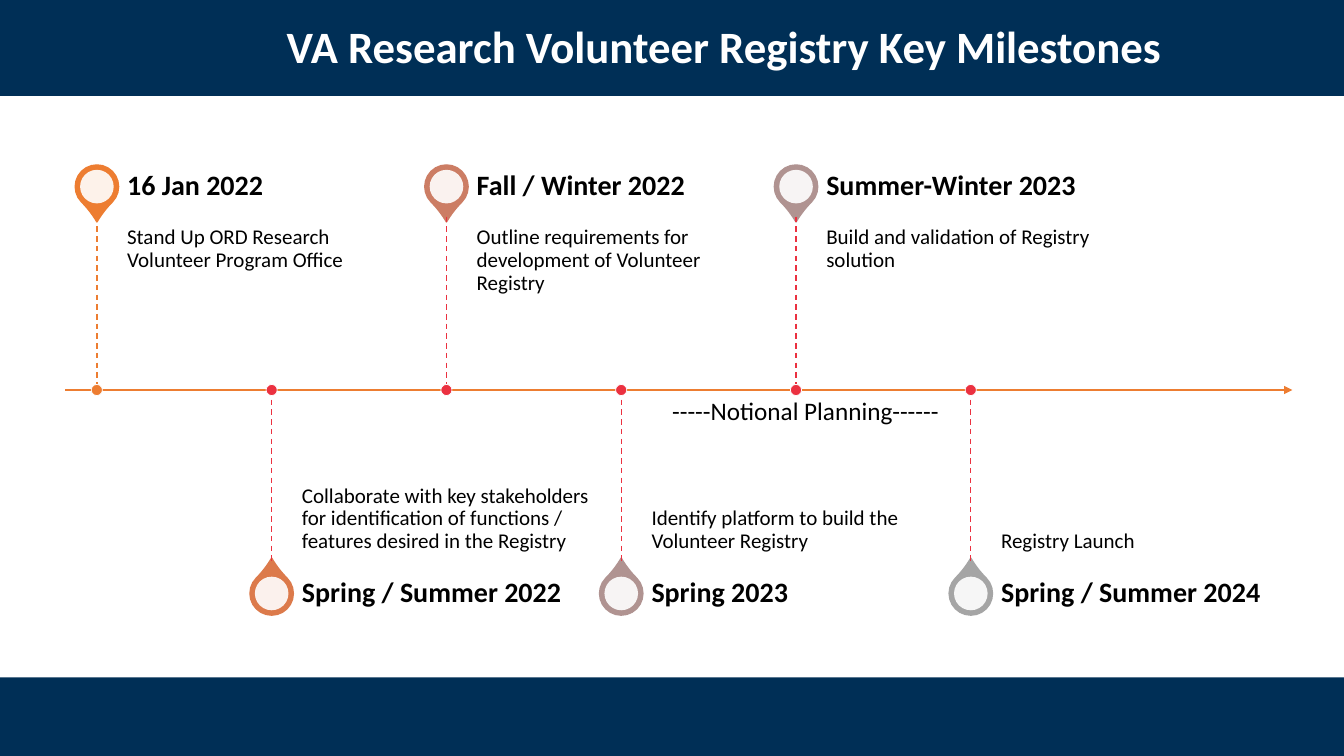
import pptx
import pptx.util
import pptx.dml.color
import pptx.enum.dml
import pptx.enum.shapes
import pptx.enum.text
import pptx.oxml.ns
from lxml import etree

Pt = pptx.util.Pt
RGB = pptx.dml.color.RGBColor.from_string
SHAPE = pptx.enum.shapes.MSO_SHAPE
ANCHOR = pptx.enum.text.MSO_ANCHOR
ALIGN = pptx.enum.text.PP_ALIGN
qn = pptx.oxml.ns.qn

C = {"navy": "002F56", "orange": "ED7D31", "red": "EB3140", "white": "FFFFFF",
     "black": "000000", "rust": "DC7A4B", "clay": "CC7D64", "mauve": "B09391",
     "gray": "A5A5A5"}

prs = pptx.Presentation()
prs.slide_width, prs.slide_height = Pt(960), Pt(540)
s = prs.slides.add_slide(prs.slide_layouts[5])


def write(sp, text, size, color="black", bold=False, align=ALIGN.LEFT,
          anchor=ANCHOR.TOP, wrap=True, spacing=1.0, insets=(7.2, 3.6, 7.2, 3.6)):
    tf = sp.text_frame
    tf.word_wrap = wrap
    tf.auto_size = pptx.enum.text.MSO_AUTO_SIZE.NONE
    tf.vertical_anchor = anchor
    tf.margin_left, tf.margin_top, tf.margin_right, tf.margin_bottom = map(Pt, insets)
    p = tf.paragraphs[0]
    p.alignment = align
    p.line_spacing = spacing
    p.space_before = Pt(0)
    r = p.add_run()
    r.text = text
    r.font.name, r.font.size, r.font.bold = "Calibri", Pt(size), bold
    r.font.color.rgb = RGB(C[color])


def draw(kind, box, fill, line=None, width=1):
    if kind == "line":
        sp = s.shapes.add_connector(pptx.enum.shapes.MSO_CONNECTOR.STRAIGHT, *map(Pt, box))
        etree.SubElement(sp._element.spPr, qn("a:effectLst"))
    else:
        sp = s.shapes.add_shape(kind, *map(Pt, box))
        sp.shadow.inherit = False
        sp.fill.solid()
        sp.fill.fore_color.rgb = RGB(C[fill])
    if line:
        sp.line.color.rgb = RGB(C[line])
        sp.line.width = Pt(width)
    else:
        sp.line.fill.background()
    return sp


for top, height in ((0, 68.6), (483.8, 56.2)):
    draw(SHAPE.RECTANGLE, (0, top, 960, height), "navy")

title = s.shapes.title
s.shapes._spTree.append(title._element)
title.left, title.top, title.width, title.height = Pt(191.2), Pt(10.1), Pt(652.3), Pt(46.1)
write(title, "VA Research Volunteer Registry Key Milestones", 32, "white", bold=True,
      align=ALIGN.CENTER, wrap=False)

AXIS = 278.6
axis = draw("line", (46.6, AXIS, 923.2, AXIS), None, "orange", 1.5)
etree.SubElement(axis.line._get_or_add_ln(), qn("a:tailEnd"), type="triangle")

milestones = [
    ("16 Jan 2022", "Stand Up ORD Research Volunteer Program Office", "orange", "orange"),
    ("Spring / Summer 2022", "Collaborate with key stakeholders for identification of "
     "functions / features desired in the Registry", "rust", "red"),
    ("Fall / Winter 2022", "Outline requirements for development of Volunteer Registry",
     "clay", "red"),
    ("Spring 2023", "Identify platform to build the Volunteer Registry", "mauve", "red"),
    ("Summer-Winter 2023", "Build and validation of Registry solution", "mauve", "red"),
    ("Spring / Summer 2024", "Registry Launch", "gray", "red"),
]
FIRST, STEP = 69.2, 124.85
STEM, HEAD, PIN, HOLE, DOT = 123.8, 43.2, 31, 24, 8
TEXT_GAP, TEXT_W = 21.6, 207.4

for i, (date, detail, pin_color, stem_color) in enumerate(milestones):
    x = FIRST + i * STEP
    above = i % 2 == 0
    pin_y = AXIS - 145.3 if above else AXIS + 145.3
    stem_top = AXIS - STEM if above else AXIS
    head_top = stem_top - HEAD if above else stem_top + STEM

    pin = draw(SHAPE.TEAR, (x - PIN / 2, pin_y - PIN / 2, PIN, PIN), pin_color, pin_color)
    pin.adjustments[0] = 1.15
    pin.rotation = 135 if above else 315
    hole = draw(SHAPE.OVAL, (x - HOLE / 2, pin_y - HOLE / 2, HOLE, HOLE), "white")
    rgb = hole._element.spPr.find(qn("a:solidFill")).find(qn("a:srgbClr"))
    etree.SubElement(rgb, qn("a:alpha"), val="90000")

    tb = s.shapes.add_textbox(*map(Pt, (x + TEXT_GAP, stem_top, TEXT_W, STEM)))
    write(tb, detail, 15, spacing=0.9, anchor=ANCHOR.TOP if above else ANCHOR.BOTTOM,
          insets=(0, 7.2, 7.2, 11.5) if above else (0, 11.5, 0, 7.2))
    tb = s.shapes.add_textbox(*map(Pt, (x + TEXT_GAP, head_top, TEXT_W, HEAD)))
    write(tb, date, 20, bold=True, spacing=0.9, anchor=ANCHOR.MIDDLE, insets=(0, 0, 10, 0))

    stem = draw("line", (x, stem_top, x, stem_top + STEM), None, stem_color)
    stem.line.dash_style = pptx.enum.dml.MSO_LINE.DASH
    draw(SHAPE.OVAL, (x - DOT / 2, AXIS - DOT / 2, DOT, DOT), stem_color, "white", 0.5)

tb = s.shapes.add_textbox(Pt(473), Pt(AXIS), Pt(207.4), Pt(29))
write(tb, "-----Notional Planning------", 18, wrap=False)

prs.save("out.pptx")
